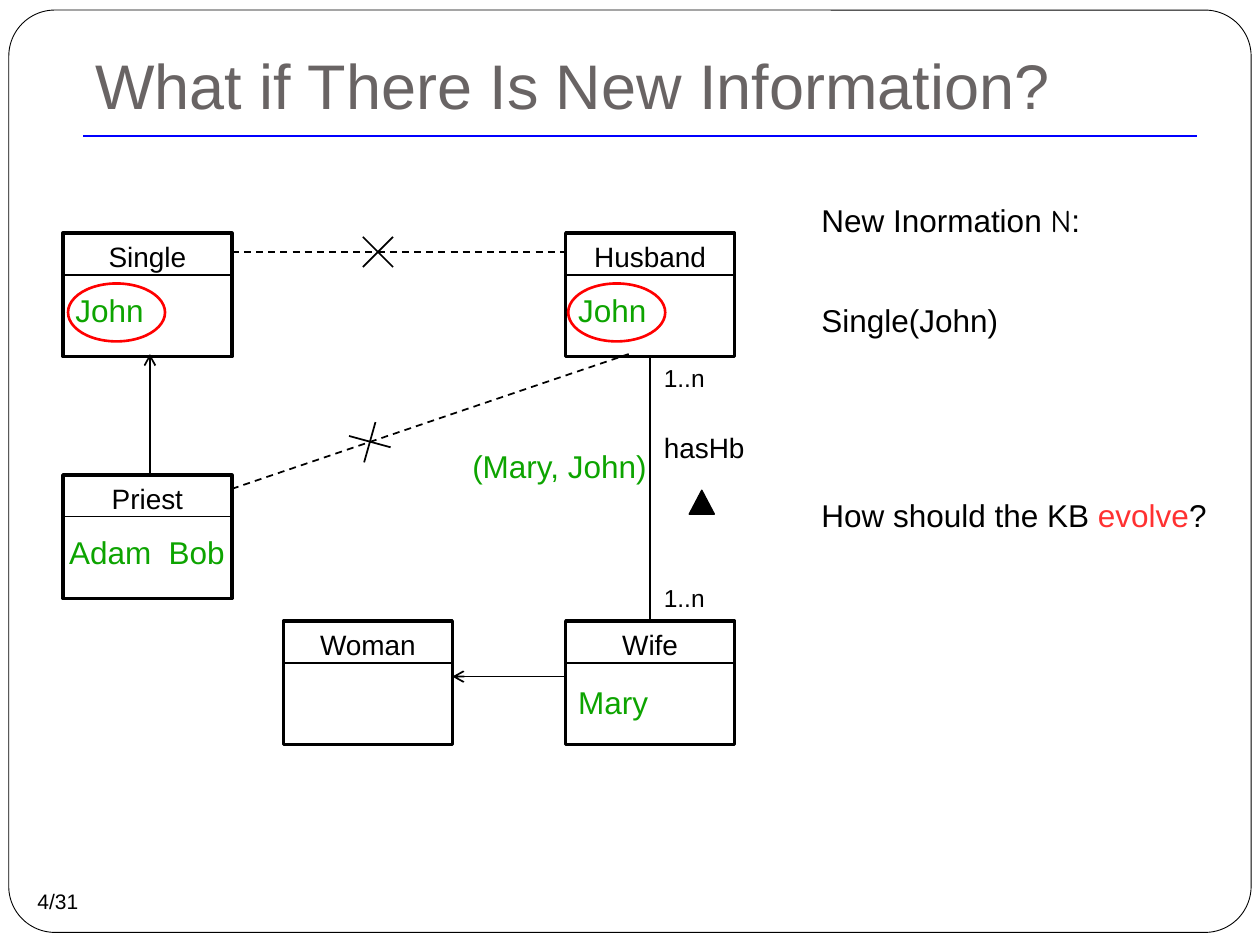
from dataclasses import dataclass
from typing import Optional

from lxml.etree import SubElement
from pptx import Presentation
from pptx.dml.color import RGBColor
from pptx.enum.dml import MSO_LINE
from pptx.enum.shapes import MSO_CONNECTOR, MSO_SHAPE as Shape
from pptx.enum.text import MSO_ANCHOR as Anchor, PP_ALIGN as Align
from pptx.oxml.ns import qn
from pptx.util import Emu, Inches, Pt

COLORS = {
    "paper": "FFFFFF", "ink": "000000", "title": "696464", "rule": "0000FF",
    "member": "0DA400", "ring": "FF0000", "accent": "FF3131",
}
FONT = "Arial"

# The grid has 100 columns and 75 rows over the whole slide
deck = Presentation()
deck.slide_width, deck.slide_height = Inches(10), Inches(7.5)
COL, ROW = deck.slide_width / 100, deck.slide_height / 75
CLASS_W, CLASS_H, NAME_H = 13.4, 9.8, 3.3
page = deck.slides.add_slide(deck.slide_layouts[6])


@dataclass
class Span:
    text: str
    color: str = "ink"
    font: str = FONT


@dataclass
class ClassBox:
    name: str
    col: float
    row: float


@dataclass
class Link:
    start: tuple[float, float]
    end: tuple[float, float]
    dashed: bool = False
    arrow: bool = False
    color: str = "ink"


@dataclass
class Label:
    text: str
    col: float
    row: float
    width: float
    height: float
    size: float = 18
    color: str = "member"
    align: Align = Align.LEFT
    wrap: bool = True
    anchor: Anchor = Anchor.TOP


def rgb(name: str) -> RGBColor:
    return RGBColor.from_string(COLORS[name])


def place(col: float, row: float, width: float, height: float) -> list[Emu]:
    return [Emu(round(n)) for n in (col * COL, row * ROW, width * COL, height * ROW)]


def add_spans(para, spans: list[Span], size: float) -> None:
    for item in spans:
        span = para.add_run()
        span.text = item.text
        span.font.size, span.font.name = Pt(size), item.font
        span.font.color.rgb = rgb(item.color)


def draw_shape(kind: Shape, area: tuple, fill: Optional[str], line: str, weight: float):
    shape = page.shapes.add_shape(kind, *place(*area))
    shape.shadow.inherit = False
    if fill:
        shape.fill.solid()
        shape.fill.fore_color.rgb = rgb(fill)
    else:
        shape.fill.background()
    shape.line.color.rgb, shape.line.width = rgb(line), Pt(weight)
    return shape


def draw_link(link: Link) -> None:
    ends = place(*link.start, *link.end)
    line = page.shapes.add_connector(MSO_CONNECTOR.STRAIGHT, *ends)
    line.line.color.rgb, line.line.width = rgb(link.color), Pt(1)
    if link.dashed:
        line.line.dash_style = MSO_LINE.DASH
    if link.arrow:
        SubElement(line.line._get_or_add_ln(), qn("a:tailEnd"), type="arrow")
    SubElement(line._element.spPr, qn("a:effectLst"))


def draw_class(item: ClassBox) -> None:
    area = (item.col, item.row, CLASS_W, CLASS_H)
    box = draw_shape(Shape.RECTANGLE, area, "paper", "ink", 2)
    box.text_frame.vertical_anchor = Anchor.TOP
    para = box.text_frame.paragraphs[0]
    para.alignment = Align.CENTER
    add_spans(para, [Span(item.name)], 16)
    split = item.row + NAME_H
    draw_link(Link((item.col, split), (item.col + CLASS_W, split)))


def draw_label(label: Label) -> None:
    area = place(label.col, label.row, label.width, label.height)
    frame = page.shapes.add_textbox(*area).text_frame
    frame.word_wrap, frame.vertical_anchor = label.wrap, label.anchor
    para = frame.paragraphs[0]
    para.alignment = label.align
    add_spans(para, [Span(label.text, label.color)], label.size)


# Frame, title and rule
border = draw_shape(Shape.ROUNDED_RECTANGLE, (0.7, 0.8, 98.6, 73.2), "paper", "ink", 0.5)
border.adjustments[0] = 0.05
draw_link(Link((6.6, 10.8), (95, 10.8), color="rule"))
draw_label(Label("What if There Is New Information?", 6.6, 2.8, 88.3, 7.8, 36,
                 "title", anchor=Anchor.MIDDLE))

# Classes
LEFT, MIDDLE, RIGHT = 5, 22.5, 44.9
TOP, CENTRE, BOTTOM = 18.5, 37.7, 49.3
for item in (
    ClassBox("Single", LEFT, TOP),
    ClassBox("Husband", RIGHT, TOP),
    ClassBox("Priest", LEFT, CENTRE),
    ClassBox("Wife", RIGHT, BOTTOM),
    ClassBox("Woman", MIDDLE, BOTTOM),
):
    draw_class(item)

# Disjointness, inheritance and association
for link in (
    Link((LEFT + CLASS_W, 20), (RIGHT, 20), dashed=True),
    Link((28.8, 21.2), (31.2, 18.8)),
    Link((31.2, 21.2), (28.8, 18.8)),
    Link((LEFT + CLASS_W, 38.8), (49.9, 28.1), dashed=True),
    Link((29.8, 33.5), (28.9, 36.7)),
    Link((27.7, 34.6), (31, 35.5)),
    Link((11.9, CENTRE), (11.9, 28.1), arrow=True),
    Link((RIGHT, 53.7), (MIDDLE + CLASS_W, 53.7), arrow=True),
    Link((51.6, BOTTOM), (51.6, TOP + CLASS_H)),
):
    draw_link(link)
draw_shape(Shape.ISOSCELES_TRIANGLE, (54.7, 38.9, 2, 1.9), "ink", "ink", 0.75)

# Members, role names and page number
for label in (
    Label("hasHb", 51.7, 33.7, 8.5, 3.7, 16, "ink", wrap=False),
    Label("1..n", 51.7, 28.3, 6.6, 3.4, 14, "ink"),
    Label("1..n", 51.7, 45.8, 6.6, 3.4, 14, "ink"),
    Label("John", LEFT, 22.6, 10.8, 4),
    Label("John", RIGHT, 22.6, 11.7, 4),
    Label("Mary", RIGHT, 53.7, 11.7, 4),
    Label("Adam", 4.5, 41.8, 9, 4),
    Label("Bob", 12.4, 41.8, 7, 4),
    Label("(Mary, John)", 36.5, 35, 18.7, 4),
    Label("4/31", 0.5, 70, 6.7, 3, 12, "ink", Align.RIGHT),
):
    draw_label(label)

# Rings around the conflicting member
for col in (5.4, 45.1):
    draw_shape(Shape.OVAL, (col, 22.5, 7.7, 4.6), None, "ring", 1.5)

# Remarks: space before in points, then the spans
REMARKS = [
    (0, [Span("New Inormation "), Span("N", font="Comic Neue"), Span(":")]),
    (35, [Span("Single(John)")]),
    (90, [Span("How should the KB "), Span("evolve", "accent"), Span("?")]),
]
frame = page.shapes.add_textbox(*place(64.2, 15.5, 35.8, 27.3)).text_frame
frame.word_wrap = True
for index, (gap, spans) in enumerate(REMARKS):
    para = frame.add_paragraph() if index else frame.paragraphs[0]
    para.space_before = Pt(gap)
    add_spans(para, spans, 18)

deck.save("out.pptx")
